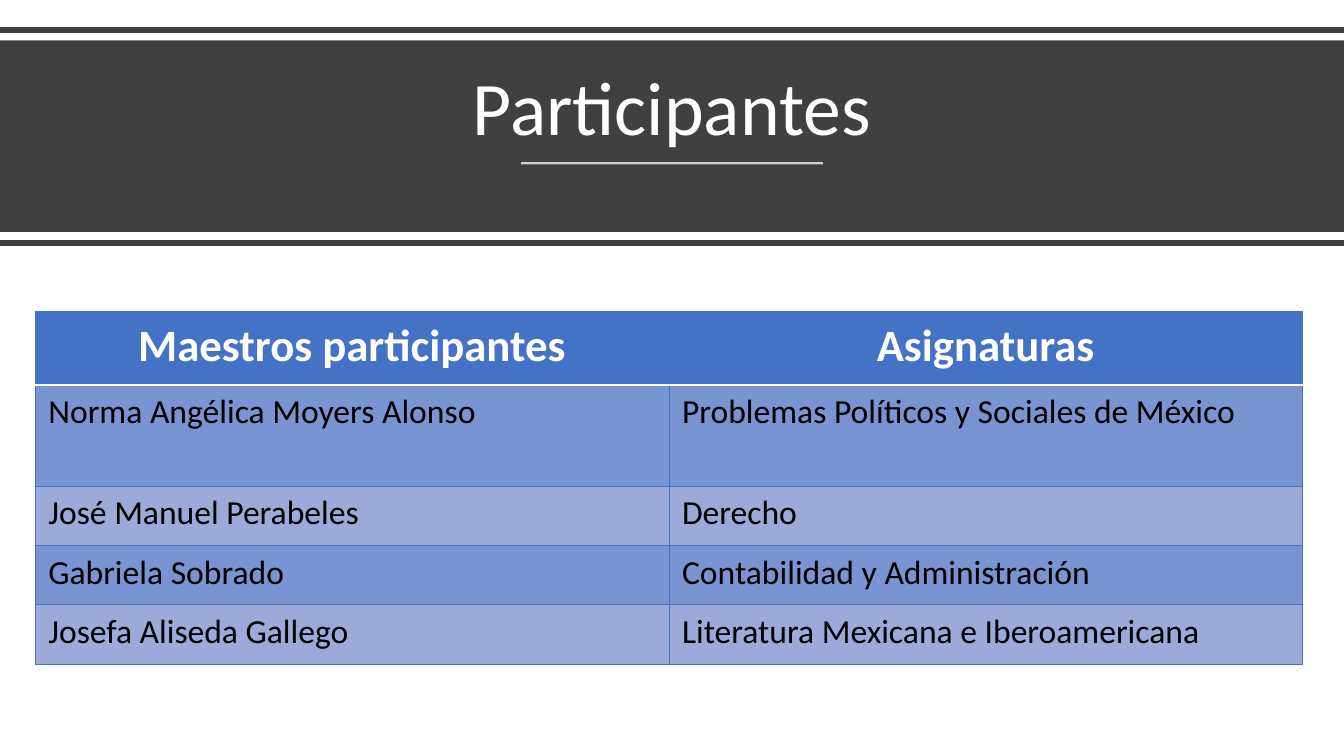
from lxml import etree
from pptx import Presentation
from pptx import util as u
from pptx.dml.color import RGBColor
from pptx.enum import shapes, text
from pptx.oxml import ns

WIDTH, HEIGHT = 13.33, 7.5
DARK, WHITE, BLACK, BLUE = "404040", "FFFFFF", "000000", "4472C4"
BANDS = ("7995D1", "9BAAD9")
ROWS = [
    ("Maestros participantes", "Asignaturas"),
    ("Norma Angélica Moyers Alonso", "Problemas Políticos y Sociales de México"),
    ("José Manuel Perabeles", "Derecho"),
    ("Gabriela Sobrado", "Contabilidad y Administración"),
    ("Josefa Aliseda Gallego", "Literatura Mexicana e Iberoamericana"),
]
ROW_HEIGHTS = (0.73, 1, 0.59, 0.59, 0.59)


def paint(target, color):
    """Give a fill a solid colour from a hex string."""
    target.solid()
    target.fore_color.rgb = RGBColor.from_string(color)


def write(frame, words, size, color, align, bold=False):
    """Write one formatted run in the first paragraph of a frame."""
    para = frame.paragraphs[0]
    para.alignment = align
    span = para.add_run()
    span.text = words
    span.font.name = "Calibri"
    span.font.size = u.Pt(size)
    span.font.bold = bold
    paint(span.font.fill, color)
    return para


def add_rule(page, left, right, top, color, weight, opacity=100):
    """Draw a level line, see-through if asked."""
    rule = page.shapes.add_connector(
        shapes.MSO_CONNECTOR.STRAIGHT,
        u.Inches(left), u.Inches(top), u.Inches(right), u.Inches(top))
    paint(rule.line.fill, color)
    rule.line.width = u.Pt(weight)
    properties = rule.element.spPr
    etree.SubElement(properties, ns.qn("a:effectLst"))
    if opacity < 100:
        shade = properties.find(".//" + ns.qn("a:srgbClr"))
        etree.SubElement(shade, ns.qn("a:alpha"), val=str(opacity * 1000))


def add_header(page, left, top, width, height):
    """Build the title band with its framing lines and underline."""
    band = page.shapes.add_shape(
        shapes.MSO_SHAPE.RECTANGLE,
        u.Inches(left), u.Inches(top), u.Inches(width), u.Inches(height))
    band.shadow.inherit = False
    paint(band.fill, DARK)
    band.line.fill.background()
    for edge in (top - 0.1, top + height + 0.11):
        add_rule(page, left, left + width, edge, DARK, 4)
    center = left + width / 2
    add_rule(page, center - 1.5, center + 1.5, top + 1.22, WHITE, 1.5, 75)

    title = page.shapes.title
    title.left, title.top = u.Inches(left + 0.58), u.Inches(top + 0.14)
    title.width, title.height = u.Inches(width - 1.16), u.Inches(1.02)
    frame = title.text_frame
    frame.word_wrap = True
    frame.auto_size = text.MSO_AUTO_SIZE.NONE
    frame.vertical_anchor = text.MSO_ANCHOR.BOTTOM
    para = write(frame, "Participantes", 54, WHITE, text.PP_ALIGN.CENTER)
    para.line_spacing = 0.9
    title.element.getparent().append(title.element)


def add_border(cell, side, color, weight):
    """Add a solid border on one side (L, R, T or B) of a cell."""
    properties = cell._tc.get_or_add_tcPr()
    border = etree.SubElement(properties, ns.qn("a:ln" + side), w=str(u.Pt(weight)))
    solid = etree.SubElement(border, ns.qn("a:solidFill"))
    etree.SubElement(solid, ns.qn("a:srgbClr"), val=color)


def add_participants(page, left, top, width, height):
    """Build the table of teachers and subjects."""
    table = page.shapes.add_table(
        len(ROWS), 2, u.Inches(left), u.Inches(top),
        u.Inches(width), u.Inches(height)).table
    table.horz_banding = False
    for row, words in enumerate(ROWS):
        table.rows[row].height = u.Inches(ROW_HEIGHTS[row])
        header = row == 0
        for column, label in enumerate(words):
            cell = table.cell(row, column)
            cell.margin_left = cell.margin_right = u.Inches(0.13)
            cell.margin_top = cell.margin_bottom = u.Inches(0.07)
            for side in "LRTB":
                if (row, side) in ((0, "B"), (1, "T")):
                    add_border(cell, side, WHITE, 1)
                else:
                    add_border(cell, side, BLUE, 0.5)
            paint(cell.fill, BLUE if header else BANDS[(row - 1) % 2])
            if header:
                write(cell.text_frame, label, 32, WHITE, text.PP_ALIGN.CENTER, True)
            else:
                write(cell.text_frame, label, 24, BLACK, text.PP_ALIGN.LEFT)


def main():
    """Build and save the deck."""
    deck = Presentation()
    deck.slide_width, deck.slide_height = u.Inches(WIDTH), u.Inches(HEIGHT)
    page = deck.slides.add_slide(deck.slide_layouts.get_by_name("Title Only"))
    paint(page.background.fill, WHITE)
    add_header(page, 0, 0.4, WIDTH, 1.9)
    add_participants(page, 0.35, 3.09, 12.57, sum(ROW_HEIGHTS))
    deck.save("out.pptx")


if __name__ == "__main__":
    main()
